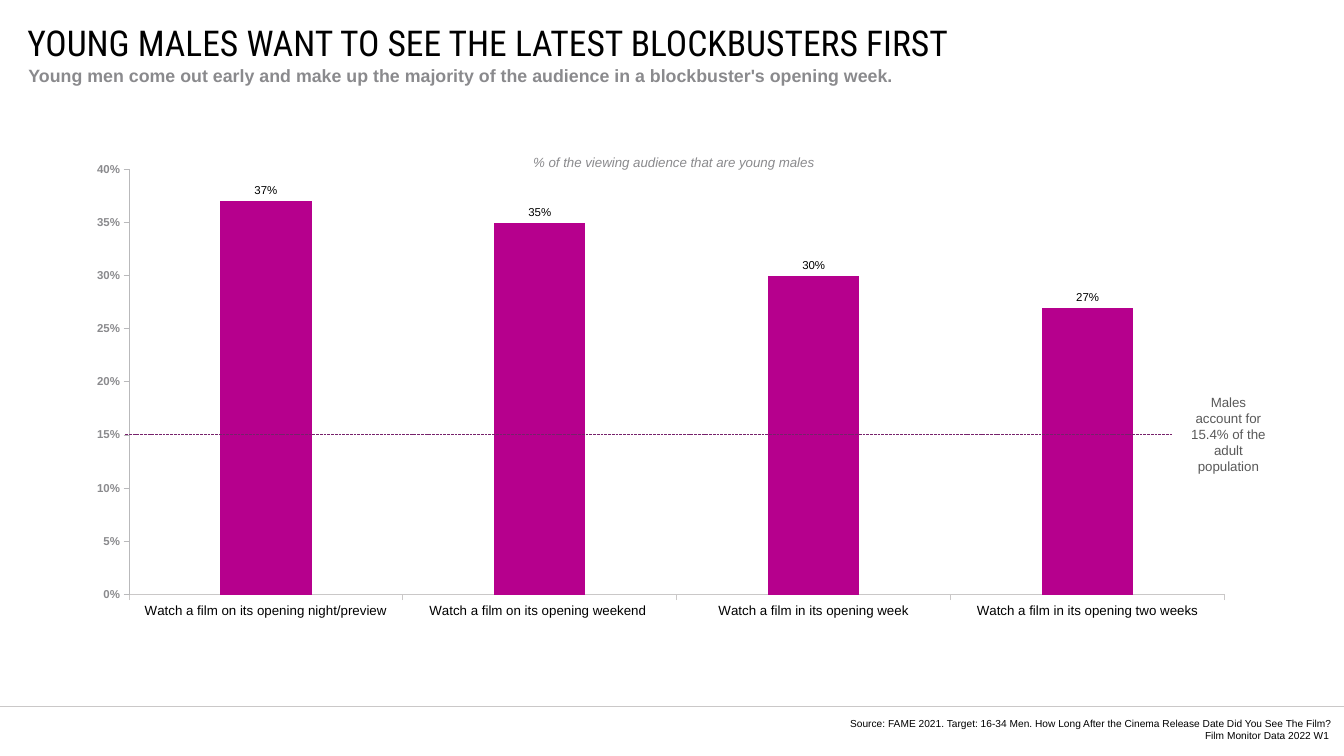
import pptx
import pptx.chart.data
import pptx.dml.color
import pptx.enum.chart
import pptx.enum.dml
import pptx.enum.shapes
import pptx.enum.text
import pptx.oxml
import pptx.oxml.ns
import pptx.util

Cm = pptx.util.Cm
Pt = pptx.util.Pt
ALIGN = pptx.enum.text.PP_ALIGN
ANCHOR = pptx.enum.text.MSO_ANCHOR

COLORS = {
    "black": "000000",
    "grey": "8A8A8D",
    "dark_grey": "595959",
    "rule": "CAC8C8",
    "value_axis": "B9B9BB",
    "bar": "B6008D",
    "average": "77226C",
}

AUDIENCE = {
    "Watch a film on its opening night/preview": 0.37,
    "Watch a film on its opening weekend ": 0.35,
    "Watch a film in its opening week": 0.30,
    "Watch a film in its opening two weeks": 0.27,
}

# Plot area as fractions of the chart
PLOT = {"x": 0.067, "y": 0.013, "w": 0.921, "h": 0.849}


def rgb(name):
    return pptx.dml.color.RGBColor.from_string(COLORS[name])


def style_font(font, size, color, bold=False, italic=False, face="Arial"):
    font.name = face
    font.size = Pt(size)
    font.bold = bold
    font.italic = italic
    font.color.rgb = rgb(color)


def add_text(slide, box, text, size, color, align=ALIGN.LEFT, anchor=ANCHOR.TOP,
             inset=(0, 0), spacing=None, **font_style):
    frame = slide.shapes.add_textbox(*map(Cm, box)).text_frame
    frame.word_wrap = True
    frame.vertical_anchor = anchor
    frame.margin_left = frame.margin_right = Cm(inset[0])
    frame.margin_top = frame.margin_bottom = Cm(inset[1])
    frame.text = text
    for paragraph in frame.paragraphs:
        paragraph.alignment = align
        if spacing:
            paragraph.line_spacing = Pt(spacing)
        for run in paragraph.runs:
            style_font(run.font, size, color, **font_style)


def add_horizontal(slide, left, right, y, color, width, dash=None):
    line = slide.shapes.add_connector(
        pptx.enum.shapes.MSO_CONNECTOR.STRAIGHT, Cm(left), Cm(y), Cm(right), Cm(y))
    line.line.color.rgb = rgb(color)
    line.line.width = Pt(width)
    if dash:
        line.line.dash_style = dash
    line._element.spPr.append(pptx.oxml.parse_xml(
        f"<a:effectLst {pptx.oxml.ns.nsdecls('a')}/>"))


def style_axis(axis, size, color, line_color, bold=False):
    axis.has_major_gridlines = False
    axis.major_tick_mark = pptx.enum.chart.XL_TICK_MARK.OUTSIDE
    axis.minor_tick_mark = pptx.enum.chart.XL_TICK_MARK.NONE
    style_font(axis.tick_labels.font, size, color, bold)
    axis.format.line.color.rgb = rgb(line_color)
    axis.format.line.width = Pt(0.75)


def place_plot(chart):
    plot_area = chart._chartSpace.chart.plotArea
    for layout in plot_area.findall(pptx.oxml.ns.qn("c:layout")):
        plot_area.remove(layout)
    modes = "".join(f'<c:{side}Mode val="edge"/>' for side in "xy")
    sizes = "".join(f'<c:{side} val="{share}"/>' for side, share in PLOT.items())
    plot_area.insert(0, pptx.oxml.parse_xml(
        f"<c:layout {pptx.oxml.ns.nsdecls('c')}><c:manualLayout>"
        f'<c:layoutTarget val="inner"/>{modes}{sizes}'
        "</c:manualLayout></c:layout>"))


def add_audience_chart(slide, box):
    audience = pptx.chart.data.CategoryChartData(number_format="0%")
    audience.categories = list(AUDIENCE)
    audience.add_series("Series 1", list(AUDIENCE.values()))
    chart = slide.shapes.add_chart(
        pptx.enum.chart.XL_CHART_TYPE.COLUMN_CLUSTERED, *map(Cm, box), audience).chart
    chart.has_legend = False
    chart.has_title = False
    style_font(chart.font, 10, "black")

    # Axes
    style_axis(chart.category_axis, 10.5, "black", "rule")
    share_axis = chart.value_axis
    style_axis(share_axis, 9, "grey", "value_axis", bold=True)
    share_axis.minimum_scale = 0
    share_axis.maximum_scale = 0.4
    share_axis.major_unit = 0.05
    share_axis.tick_labels.number_format = "0%"
    share_axis.tick_labels.number_format_is_linked = False

    # Bars and their labels
    bars = chart.plots[0]
    bars.gap_width = 200
    bars.vary_by_categories = False
    fill = bars.series[0].format.fill
    fill.solid()
    fill.fore_color.rgb = rgb("bar")
    labels = bars.series[0].data_labels
    labels.show_value = True
    labels.number_format = "0%"
    labels.number_format_is_linked = False
    labels.position = pptx.enum.chart.XL_LABEL_POSITION.OUTSIDE_END
    style_font(labels.font, 9, "black")
    place_plot(chart)


def main():
    deck = pptx.Presentation()
    deck.slide_width, deck.slide_height = Cm(37.34), Cm(21)
    slide = deck.slides.add_slide(deck.slide_layouts[6])

    # Heading
    add_horizontal(slide, 0, 37.34, 19.63, "rule", 0.5)
    add_text(slide, (0.76, 0.76, 34.49, 0.81),
             "YOUNG MALES WANT TO SEE THE LATEST BLOCKBUSTERS FIRST",
             28, "black", anchor=ANCHOR.MIDDLE, face="Roboto Condensed")
    add_text(slide, (0.79, 1.85, 35.1, 1.22),
             "Young men come out early and make up the majority of the audience "
             "in a blockbuster's opening week.",
             14, "grey", spacing=15, bold=True)

    # Source
    add_text(slide, (18.77, 19.91, 18.24, 0.69),
             "Source: FAME 2021. Target: 16-34 Men. How Long After the Cinema "
             "Release Date Did You See The Film?\nFilm Monitor Data 2022 W1 ",
             8, "black", align=ALIGN.RIGHT, anchor=ANCHOR.MIDDLE)

    # Chart with the population average
    add_audience_chart(slide, (1.37, 4.52, 33.05, 13.92))
    add_horizontal(slide, 3.48, 32.56, 12.07, "average", 0.75,
                   pptx.enum.dml.MSO_LINE.SQUARE_DOT)
    add_text(slide, (32.72, 10.82, 2.82, 2.49),
             "Males account for 15.4% of the adult population",
             10.5, "dark_grey", align=ALIGN.CENTER, inset=(0.25, 0.13))
    add_text(slide, (11.89, 4.19, 13.77, 1.22),
             "% of the viewing audience that are young males ",
             10.5, "grey", align=ALIGN.CENTER, spacing=15, italic=True)

    deck.save("out.pptx")


if __name__ == "__main__":
    main()
